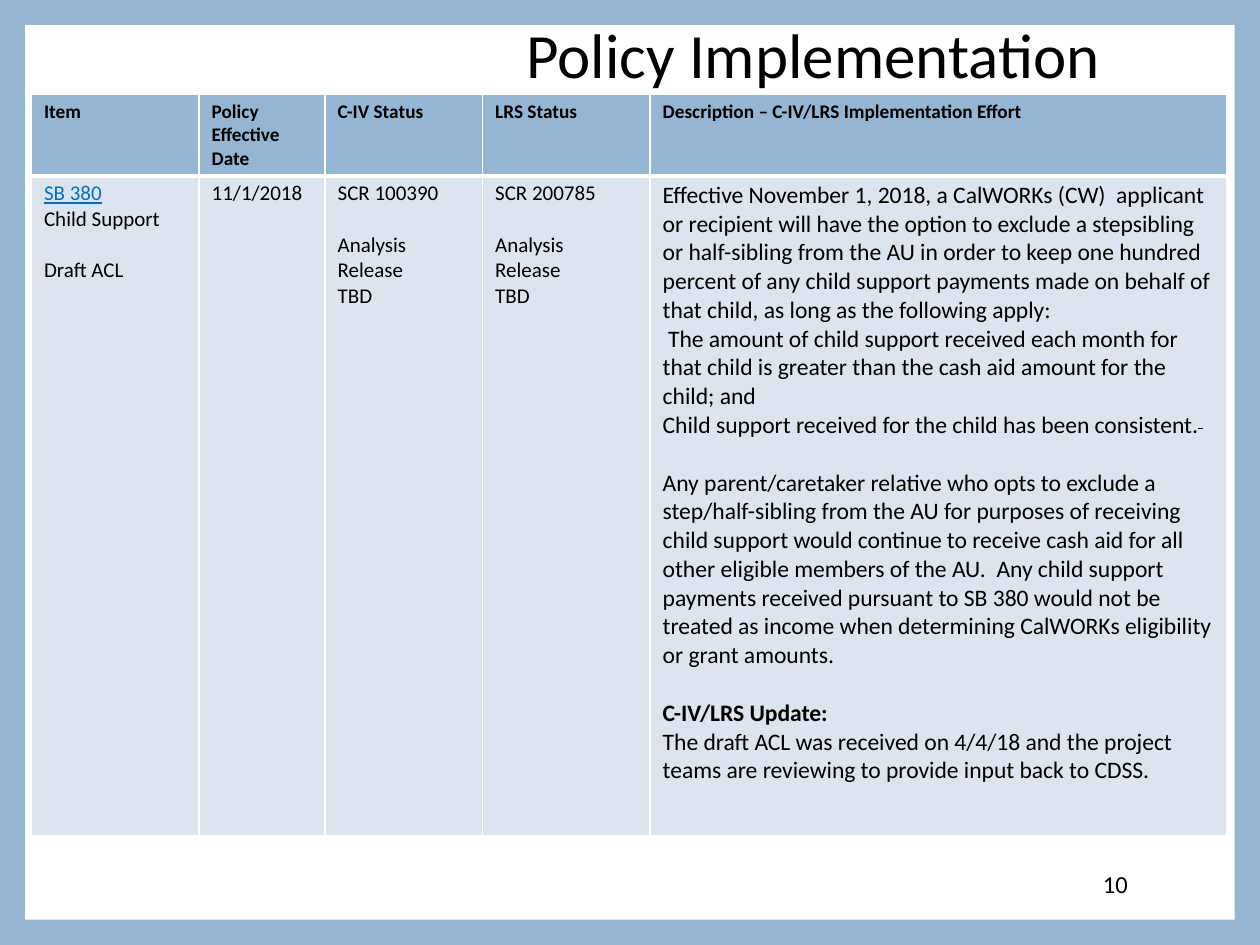
"""Build the Policy Implementation status slide."""
from lxml import etree
from pptx import Presentation
from pptx.dml.color import RGBColor
from pptx.enum.shapes import MSO_SHAPE
from pptx.enum.text import MSO_ANCHOR, PP_ALIGN
from pptx.oxml.ns import qn
from pptx.util import Inches, Pt

RECT = MSO_SHAPE.RECTANGLE
MIDDLE = MSO_ANCHOR.MIDDLE
RIGHT = PP_ALIGN.RIGHT

BLUE = RGBColor(0x94, 0xB6, 0xD2)
PALE = RGBColor(0xDC, 0xE5, 0xEE)
LINK = RGBColor(0x00, 0x70, 0xC0)
BLACK = RGBColor(0, 0, 0)
WHITE = RGBColor(255, 255, 255)

COLUMN_WIDTHS = [1.33, 1, 1.25, 1.33, 4.58]
ROW_HEIGHTS = [0.63, 5.24]
HEADERS = ["Item", "Policy Effective Date", "C-IV Status", "LRS Status",
           "Description – C-IV/LRS Implementation Effort"]
STATUS = [("Analysis", True), ("Release", False), ("TBD", False)]
DETAILS = [
    [("SB 380", False), ("Child Support", False), ("Draft ACL", True)],
    [("11/1/2018", False)],
    [("SCR 100390", False)] + STATUS,
    [("SCR 200785", False)] + STATUS,
    [("Effective November 1, 2018, a CalWORKs (CW)  applicant or recipient "
      "will have the option to exclude a stepsibling or half-sibling from the "
      "AU in order to keep one hundred percent of any child support payments "
      "made on behalf of that child, as long as the following apply:", False),
     (" The amount of child support received each month for that child is "
      "greater than the cash aid amount for the child; and", False),
     ("Child support received for the child has been consistent.", False),
     ("Any parent/caretaker relative who opts to exclude a step/half-sibling "
      "from the AU for purposes of receiving child support would continue to "
      "receive cash aid for all other eligible members of the AU.  Any child "
      "support payments received pursuant to SB 380 would not be treated as "
      "income when determining CalWORKs eligibility or grant amounts.", True),
     ("C-IV/LRS Update:", True),
     ("The draft ACL was received on 4/4/18 and the project teams are "
      "reviewing to provide input back to CDSS.", False)],
]


def add_run(p, text, size, color=BLACK, bold=False):
    r = p.add_run()
    r.text = text
    r.font.name = "Calibri"
    r.font.size = Pt(size)
    r.font.bold = bold
    r.font.color.rgb = color
    return r


def style_cell(cell, color, bottom):
    tcPr = cell._tc.get_or_add_tcPr()
    for side, width in (("L", 1), ("R", 1), ("T", 1), ("B", bottom)):
        ln = etree.SubElement(tcPr, qn(f"a:ln{side}"), w=str(Pt(width)))
        fill = etree.SubElement(ln, qn("a:solidFill"))
        etree.SubElement(fill, qn("a:srgbClr"), val=str(WHITE))
    cell.fill.solid()
    cell.fill.fore_color.rgb = color
    cell.margin_left = cell.margin_right = Inches(0.1)
    cell.margin_top = cell.margin_bottom = Inches(0.04)


prs = Presentation()
prs.slide_width = Inches(10)
prs.slide_height = Inches(7.5)
s = prs.slides.add_slide(prs.slide_layouts[5])
s.background.fill.solid()
s.background.fill.fore_color.rgb = BLUE

panel = s.shapes.add_shape(RECT, Inches(0.2), Inches(0.2), Inches(9.6), Inches(7.1))
panel.shadow.inherit = False
panel.fill.solid()
panel.fill.fore_color.rgb = WHITE
panel.line.fill.background()
s.shapes._spTree.insert(2, panel._element)

title = s.shapes.title
title.left, title.top = Inches(0.5), Inches(0.17)
title.width, title.height = Inches(8.33), Inches(0.58)
tf = title.text_frame
tf.vertical_anchor = MIDDLE
p = tf.paragraphs[0]
p.alignment = RIGHT
p.line_spacing = 0.9
add_run(p, "Policy Implementation", 36)

frame = s.shapes.add_table(2, 5, Inches(0.25), Inches(0.75),
                           Inches(sum(COLUMN_WIDTHS)), Inches(sum(ROW_HEIGHTS)))
table = frame.table
for row, height in zip(table.rows, ROW_HEIGHTS):
    row.height = Inches(height)

for i, (width, header, lines) in enumerate(zip(COLUMN_WIDTHS, HEADERS, DETAILS)):
    table.columns[i].width = Inches(width)
    cell = table.cell(0, i)
    style_cell(cell, BLUE, 3)
    add_run(cell.text_frame.paragraphs[0], header, 11, bold=True)

    cell = table.cell(1, i)
    style_cell(cell, PALE, 1)
    size = 13.5 if header.startswith("Description") else 12
    tf = cell.text_frame
    for n, (text, gap) in enumerate(lines):
        p = tf.add_paragraph() if n else tf.paragraphs[0]
        if gap:
            p.space_before = Pt(size * 1.22)
        r = add_run(p, text, size, bold=text.endswith("Update:"))
        if text == "SB 380":
            r.font.color.rgb = LINK
            r.font.underline = True
        if text.endswith("consistent."):
            r = add_run(p, " ", size)
            r.font._element.set("strike", "sngStrike")

number = s.shapes.add_textbox(Inches(7.65), Inches(6.81), Inches(1.4), Inches(0.4))
tf = number.text_frame
tf.word_wrap = True
tf.vertical_anchor = MIDDLE
p = tf.paragraphs[0]
p.alignment = RIGHT
add_run(p, "10", 14)

prs.save("out.pptx")
